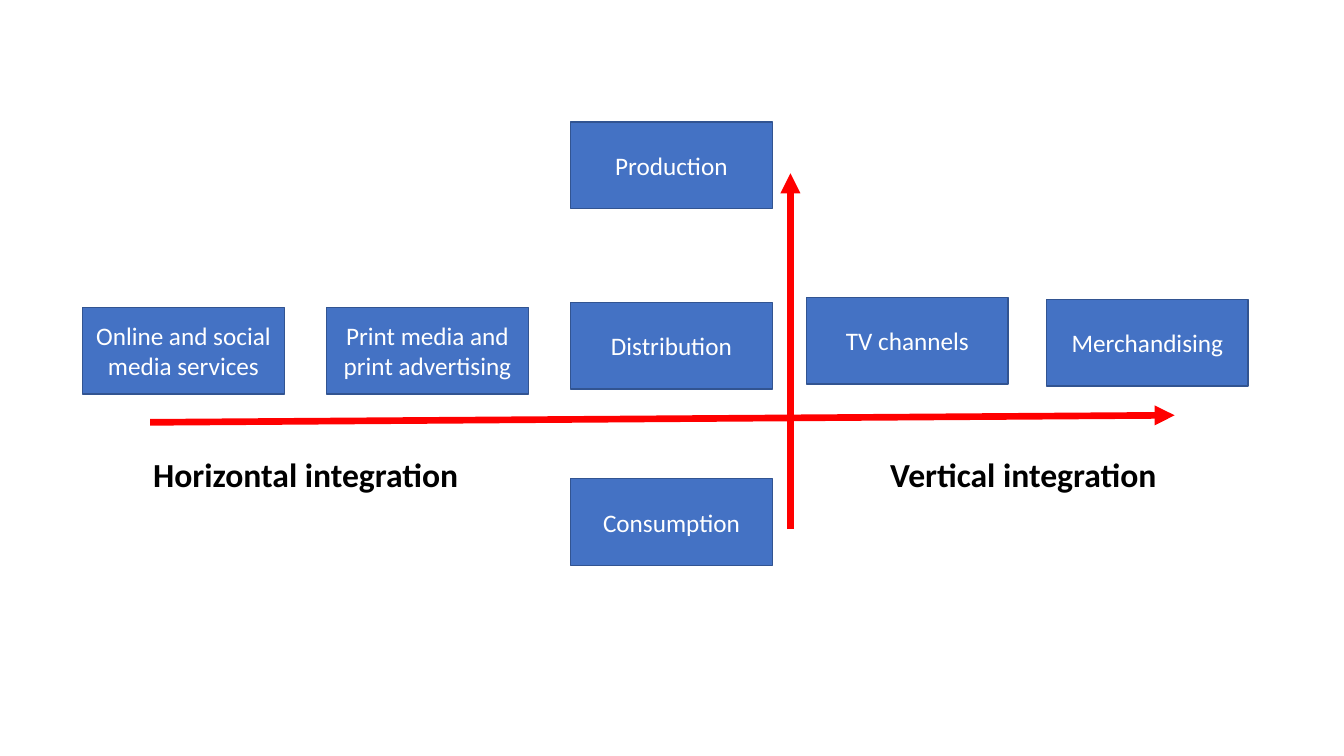
from lxml import etree
from pptx import Presentation
from pptx.dml.color import RGBColor
from pptx.enum import shapes, text
from pptx.oxml import ns
from pptx import util as u

PX = 9144  # EMU per px, 100 px to the inch
BLUE = RGBColor(0x44, 0x72, 0xC4)
EDGE = RGBColor(0x32, 0x54, 0x91)
RED = RGBColor(0xFF, 0, 0)
WHITE = RGBColor(0xFF, 0xFF, 0xFF)
BLACK = RGBColor(0, 0, 0)

BOX_W, BOX_H = 200, 86
MID = 566  # left edge of the central column
BOXES = [
    ("Production", MID, 121),
    ("Consumption", MID, 475),
    ("Merchandising", 1038, 297),
    ("TV channels", 800, 295),
    ("Distribution", MID, 300),
    ("Online and social media services", 82, 305),
    ("Print media and print advertising", 324, 305),
]


class Pen:
    """Draws on one slide in one style, with lengths in px."""

    def __init__(self, slide, font="Calibri"):
        self.shapes = slide.shapes
        self.font = font

    def add_run(self, frame, words, size, color, bold=False):
        """Add the run to the frame's first paragraph and return that paragraph."""
        frame.word_wrap = True
        para = frame.paragraphs[0]
        run = para.add_run()
        run.text = words
        run.font.name = self.font
        run.font.size = u.Pt(size)
        run.font.bold = bold
        run.font.color.rgb = color
        return para

    def box(self, words, x, y):
        rect = self.shapes.add_shape(
            shapes.MSO_SHAPE.RECTANGLE, x * PX, y * PX, BOX_W * PX, BOX_H * PX)
        rect.shadow.inherit = False
        rect.fill.solid()
        rect.fill.fore_color.rgb = BLUE
        rect.line.color.rgb = EDGE
        rect.line.width = u.Pt(1)
        rect.text_frame.vertical_anchor = text.MSO_ANCHOR.MIDDLE
        para = self.add_run(rect.text_frame, words, 18, WHITE)
        para.alignment = text.PP_ALIGN.CENTER

    def label(self, words, x, y, w, h):
        area = self.shapes.add_textbox(x * PX, y * PX, w * PX, h * PX)
        area.text_frame.auto_size = text.MSO_AUTO_SIZE.SHAPE_TO_FIT_TEXT
        self.add_run(area.text_frame, words, 24, BLACK, bold=True)

    def arrow(self, x1, y1, x2, y2):
        link = self.shapes.add_connector(
            shapes.MSO_CONNECTOR.STRAIGHT, x1 * PX, y1 * PX, x2 * PX, y2 * PX)
        link.line.color.rgb = RED
        link.line.width = u.Pt(4.75)
        props = link.element.spPr
        etree.SubElement(props.find(ns.qn("a:ln")), ns.qn("a:tailEnd"), type="triangle")
        etree.SubElement(props, ns.qn("a:effectLst"))


def main():
    deck = Presentation()
    deck.slide_width, deck.slide_height = 1333 * PX, 750 * PX
    blank = deck.slide_layouts.get_by_name("Blank")
    pen = Pen(deck.slides.add_slide(blank))

    for words, x, y in BOXES:
        pen.box(words, x, y)
    pen.arrow(149, 419, 1165, 412)
    pen.label("Vertical integration", 873, 445, 342, 50)
    pen.arrow(784, 525, 784, 172)
    pen.label("Horizontal integration", 142, 445, 338, 50)

    deck.save("out.pptx")


if __name__ == "__main__":
    main()
